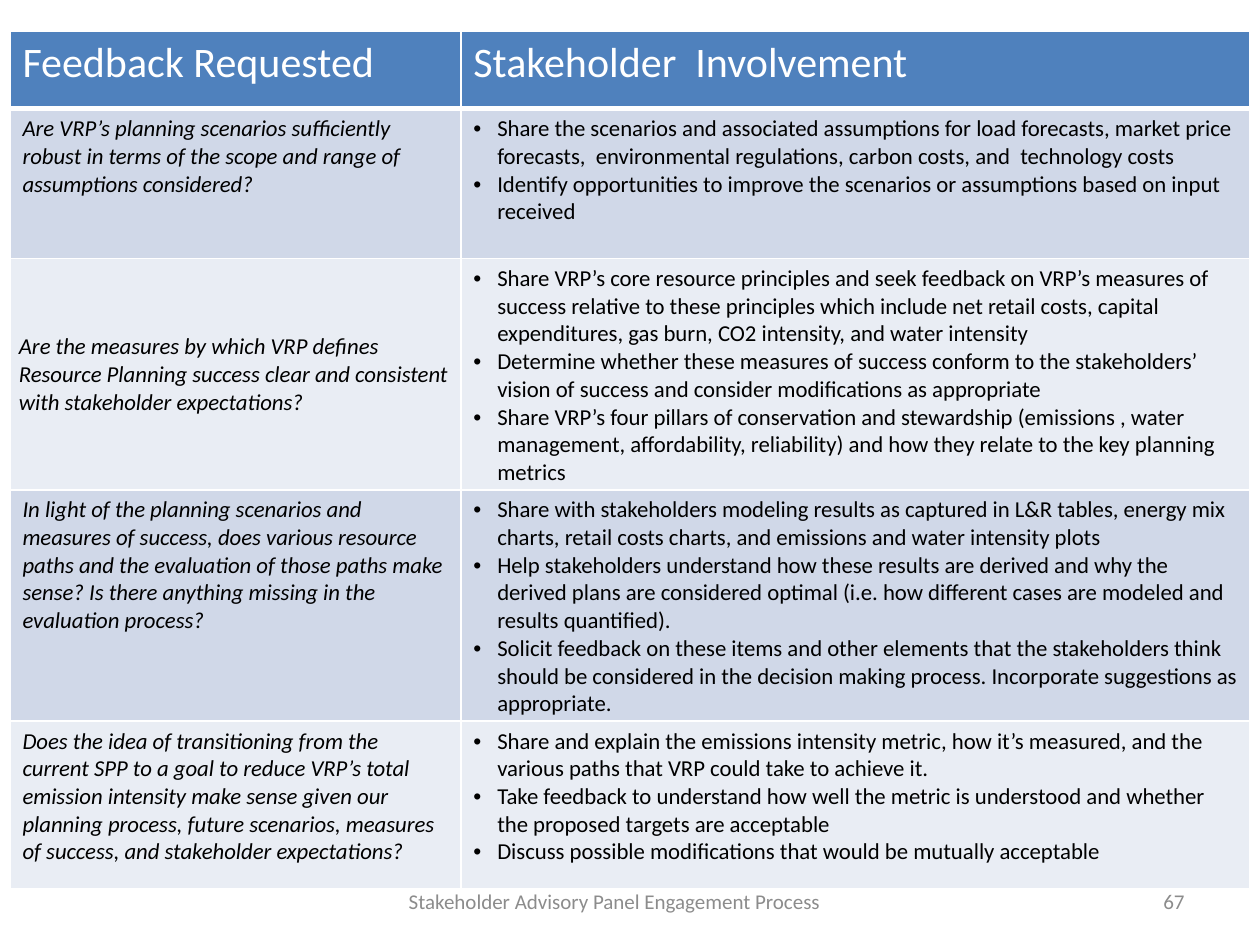
"""Build the stakeholder feedback table slide."""
from lxml import etree
from pptx import Presentation
from pptx.dml.color import RGBColor
from pptx.enum.text import MSO_ANCHOR, PP_ALIGN
from pptx.oxml.ns import qn
from pptx.util import Cm, Pt

MID = MSO_ANCHOR.MIDDLE
MIDDLE = PP_ALIGN.CENTER
RIGHT = PP_ALIGN.RIGHT
WHITE = RGBColor(0xFF, 0xFF, 0xFF)
BLACK = RGBColor(0, 0, 0)
GREY = RGBColor(0x8C, 0x8C, 0x8C)
BLUE = RGBColor(0x4F, 0x81, 0xBD)
BANDS = [RGBColor(0xD0, 0xD8, 0xE8), RGBColor(0xE9, 0xED, 0xF4)]
FONT = "Calibri"

HEADS = ["Feedback Requested", "Stakeholder  Involvement"]
ROWS = [
    ("Are VRP’s planning scenarios sufficiently robust in terms of the scope and range of "
     "assumptions considered?",
     ["Share the scenarios and associated assumptions for load forecasts, market price "
      "forecasts,  environmental regulations, carbon costs, and  technology costs",
      "Identify opportunities to improve the scenarios or assumptions based on input received"]),
    ("Are the measures by which VRP defines Resource Planning success clear and consistent "
     "with stakeholder expectations?",
     ["Share VRP’s core resource principles and seek feedback on VRP’s measures of success "
      "relative to these principles which include net retail costs, capital expenditures, "
      "gas burn, CO2 intensity, and water intensity",
      "Determine whether these measures of success conform to the stakeholders’ vision of "
      "success and consider modifications as appropriate",
      "Share VRP’s four pillars of conservation and stewardship (emissions , water management, "
      "affordability, reliability) and how they relate to the key planning metrics"]),
    ("In light of the planning scenarios and measures of success, does various resource paths "
     "and the evaluation of those paths make sense? Is there anything missing in the "
     "evaluation process?",
     ["Share with stakeholders modeling results as captured in L&R tables, energy mix charts, "
      "retail costs charts, and emissions and water intensity plots",
      "Help stakeholders understand how these results are derived and why the derived plans "
      "are considered optimal (i.e. how different cases are modeled and results quantified).",
      "Solicit feedback on these items and other elements that the stakeholders think should "
      "be considered in the decision making process. Incorporate suggestions as appropriate."]),
    ("Does the idea of transitioning from the current SPP to a goal to reduce VRP’s total "
     "emission intensity make sense given our planning process, future scenarios, measures of "
     "success, and stakeholder expectations?",
     ["Share and explain the emissions intensity metric, how it’s measured, and the various "
      "paths that VRP could take to achieve it.",
      "Take feedback to understand how well the metric is understood and whether the proposed "
      "targets are acceptable",
      "Discuss possible modifications that would be mutually acceptable"]),
]
WIDTHS = [9.09, 15.9]
HEIGHTS = [1.55, 3.02, 3.91, 3.58, 3.38]


def style(para, size, color, slant=False):
    font = para.font
    font.name, font.size, font.italic = FONT, Pt(size), slant
    font.color.rgb = color


def footer(left, width, text, align):
    box = slide.shapes.add_textbox(Cm(left), Cm(17.65), Cm(width), Cm(1.02))
    frame = box.text_frame
    frame.word_wrap = True
    frame.vertical_anchor = MID
    para = frame.paragraphs[0]
    para.text = text
    para.alignment = align
    style(para, 12, GREY)


deck = Presentation()
deck.slide_width, deck.slide_height = Cm(25.4), Cm(19.05)
slide = deck.slides.add_slide(deck.slide_layouts[6])

footer(6.99, 10.8, "Stakeholder Advisory Panel Engagement Process", MIDDLE)

frame = slide.shapes.add_table(5, 2, Cm(0.2), Cm(0.64), Cm(sum(WIDTHS)), Cm(sum(HEIGHTS)))
table = frame.table
for col, width in zip(table.columns, WIDTHS):
    col.width = Cm(width)
for row, height in zip(table.rows, HEIGHTS):
    row.height = Cm(height)

for col, head in enumerate(HEADS):
    cell = table.cell(0, col)
    cell.text = head
    style(cell.text_frame.paragraphs[0], 24, WHITE)

for row, (ask, steps) in enumerate(ROWS, 1):
    cell = table.cell(row, 0)
    cell.text = ask
    style(cell.text_frame.paragraphs[0], 13, BLACK, True)
    cell = table.cell(row, 1)
    cell.text = "\n".join(steps)
    for para in cell.text_frame.paragraphs:
        props = para._p.get_or_add_pPr()
        props.set("marL", str(Cm(0.48)))
        props.set("indent", str(-Cm(0.48)))
        etree.SubElement(props, qn("a:buFont"), typeface="Arial")
        etree.SubElement(props, qn("a:buChar"), char="•")
        style(para, 13, BLACK)

cell = table.cell(2, 0)
cell.vertical_anchor = MID
cell.margin_left = cell.margin_right = cell.margin_top = Cm(0.03)
cell.margin_bottom = 0
cell.text_frame.paragraphs[0]._p.get_or_add_pPr().set("marL", str(Cm(0.15)))

for row in range(5):
    for col in range(2):
        cell = table.cell(row, col)
        cell.fill.solid()
        cell.fill.fore_color.rgb = BANDS[(row - 1) % 2] if row else BLUE
        props = cell._tc.get_or_add_tcPr()
        for spot, side in enumerate("LRTB"):
            wide = 3 if row == 0 and side == "B" else 1
            line = etree.Element(qn("a:ln" + side), w=str(Pt(wide)))
            fill = etree.SubElement(line, qn("a:solidFill"))
            etree.SubElement(fill, qn("a:srgbClr"), val=str(WHITE))
            props.insert(spot, line)

footer(18.21, 5.92, "67", RIGHT)

deck.save("out.pptx")
